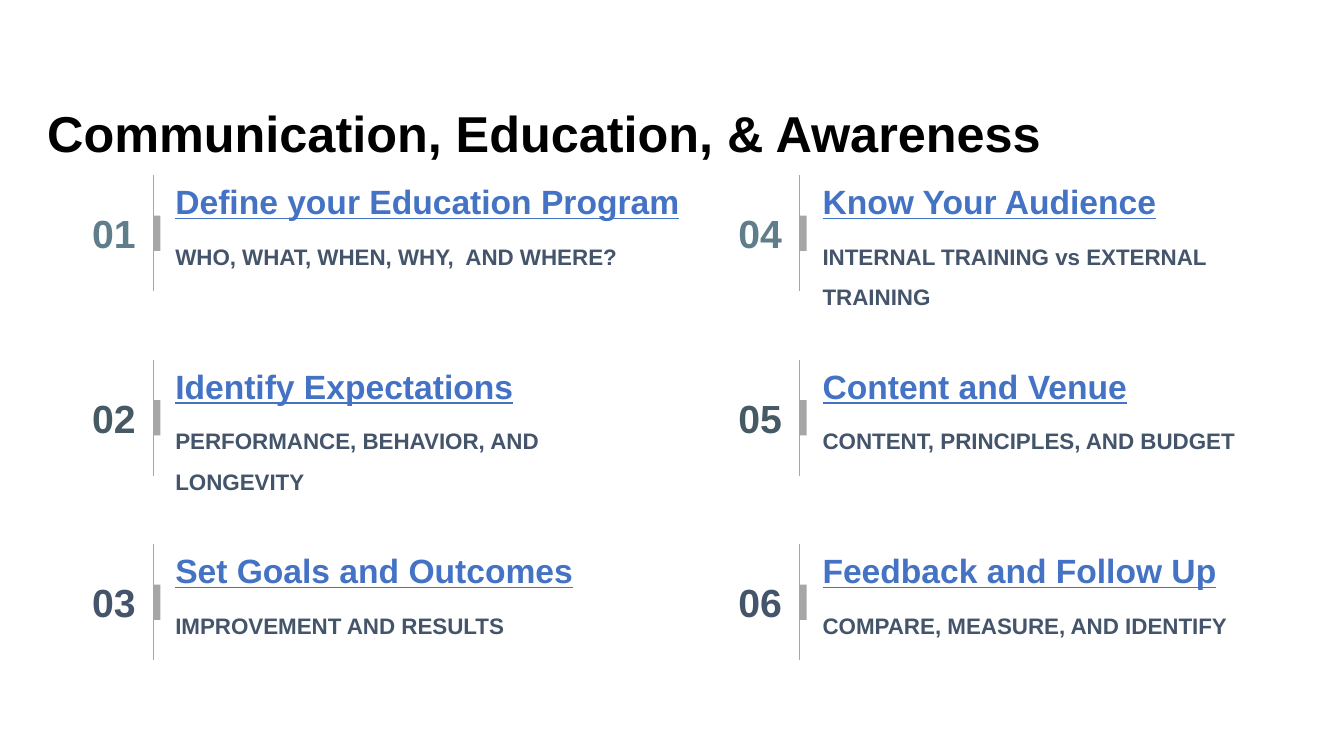
from dataclasses import dataclass

from lxml.etree import SubElement
from pptx import Presentation
from pptx.dml.color import RGBColor
from pptx.enum.shapes import MSO_CONNECTOR, MSO_SHAPE
from pptx.enum.text import MSO_AUTO_SIZE, PP_ALIGN
from pptx.oxml.ns import qn
from pptx.util import Emu, Pt

EMU_PER_PX = 9144  # 100 px to the inch

BLACK = RGBColor(0x00, 0x00, 0x00)
GREY = RGBColor(0xA6, 0xA6, 0xA6)
BLUE = RGBColor(0x44, 0x72, 0xC4)
NAVY = RGBColor(0x44, 0x54, 0x6A)
STEEL = RGBColor(0x60, 0x7D, 0x8B)
SLATE = RGBColor(0x45, 0x5A, 0x64)

TITLE = {"size": Pt(36), "color": BLACK}
HEADING = {"size": Pt(24), "color": BLUE, "underline": True}
DETAIL = {"size": Pt(16), "color": NAVY}
NUMBER_COLORS = (STEEL, SLATE, NAVY)

ROWS = 3
COLUMN_LEFT, COLUMN_PITCH = 152, 641
ROW_TOP, ROW_PITCH = 174, 183


@dataclass
class Topic:
    heading: str
    detail: str
    heading_width: int = 436
    detail_width: int = 452
    detail_height: int = 45


TOPICS = (
    Topic("Define your Education Program", "WHO, WHAT, WHEN, WHY,  AND WHERE?",
          heading_width=542, detail_width=499),
    Topic("Identify Expectations", "PERFORMANCE, BEHAVIOR, AND LONGEVITY",
          detail_width=499, detail_height=86),
    Topic("Set Goals and Outcomes", "IMPROVEMENT AND RESULTS"),
    Topic("Know Your Audience", "INTERNAL TRAINING vs EXTERNAL TRAINING",
          detail_width=499, detail_height=86),
    Topic("Content and Venue", "CONTENT, PRINCIPLES, AND BUDGET"),
    Topic("Feedback and Follow Up", "COMPARE, MEASURE, AND IDENTIFY"),
)


def px(*lengths):
    return [Emu(length * EMU_PER_PX) for length in lengths]


def add_text(shapes, text, place, style, align=PP_ALIGN.LEFT, line_spacing=None):
    box = shapes.add_textbox(*px(*place))
    frame = box.text_frame
    frame.word_wrap = True
    frame.auto_size = MSO_AUTO_SIZE.SHAPE_TO_FIT_TEXT
    para = frame.paragraphs[0]
    para.alignment = align
    para.line_spacing = line_spacing
    span = para.add_run()
    span.text = text
    font_format = {"name": "Arial", "bold": True, **style}
    span.font.color.rgb = font_format.pop("color")
    for name, value in font_format.items():
        setattr(span.font, name, value)


def add_rule(shapes, left, top, height):
    rule = shapes.add_connector(
        MSO_CONNECTOR.STRAIGHT, *px(left, top, left, top + height))
    rule.line.color.rgb = GREY
    rule.line.width = Pt(0.5)
    SubElement(rule.element.spPr, qn("a:effectLst"))


def add_marker(shapes, place):
    marker = shapes.add_shape(MSO_SHAPE.RECTANGLE, *px(*place))
    marker.shadow.inherit = False
    marker.fill.solid()
    marker.fill.fore_color.rgb = GREY
    marker.line.fill.background()


def add_topic(page, index, topic):
    column, row = divmod(index, ROWS)
    left = COLUMN_LEFT + column * COLUMN_PITCH
    top = ROW_TOP + row * ROW_PITCH
    text_left = left + 12 + column
    shapes = page.shapes.add_group_shape().shapes
    add_text(shapes, f"{index + 1:02}", (left - 76, top + 29, 74, 57),
             {"size": Pt(28), "color": NUMBER_COLORS[row]}, PP_ALIGN.CENTER)
    add_text(shapes, topic.heading, (text_left, top + 1, topic.heading_width, 50), HEADING)
    add_text(shapes, topic.detail,
             (text_left, top + 49, topic.detail_width, topic.detail_height),
             DETAIL, line_spacing=1.5)
    add_rule(shapes, left, top, 115)
    add_marker(shapes, (left, top + 40, 7, 35))


def main():
    deck = Presentation()
    deck.slide_width, deck.slide_height = px(1333, 750)
    page = deck.slides.add_slide(deck.slide_layouts[6])
    for index, topic in enumerate(TOPICS):
        add_topic(page, index, topic)
    add_text(page.shapes, "Communication, Education, & Awareness",
             (37, 96, 1137, 71), TITLE)
    deck.save("out.pptx")


if __name__ == "__main__":
    main()
